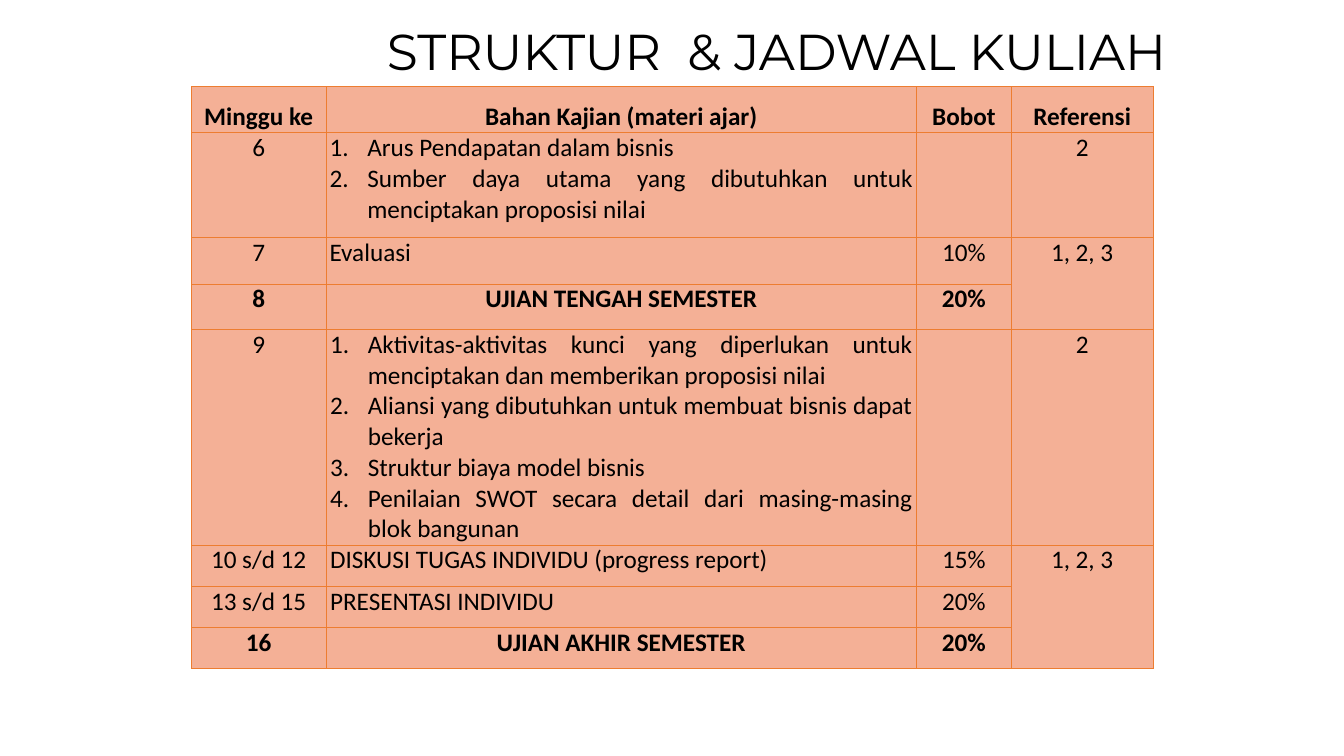
from dataclasses import dataclass

from lxml.etree import SubElement
from pptx import Presentation
from pptx.dml.color import RGBColor
from pptx.enum.text import MSO_ANCHOR as Anchor, PP_ALIGN as Align
from pptx.oxml import parse_xml
from pptx.oxml.ns import nsdecls, qn
from pptx.slide import Slide
from pptx.table import Table, _Cell as Cell
from pptx.text.text import _Paragraph as Paragraph
from pptx.util import Pt


@dataclass(frozen=True)
class Theme:
    ink: str = "000000"
    cell_fill: str = "F4B096"
    border: str = "ED7D31"
    border_width: float = 0.5
    title_font: str = "Montserrat"
    title_size: float = 36
    body_font: str = "Calibri"
    body_size: float = 18


@dataclass(frozen=True)
class Week:
    label: str
    topics: tuple[str, ...]
    weight: str
    references: str
    height: float
    align: Align = Align.LEFT
    bold: bool = False
    numbered: bool = False
    header: bool = False
    inset: float = 2.6


THEME = Theme()
COLUMN_WIDTHS = (96, 422, 67.5, 101.5)
TOPIC_COLUMN, REFERENCE_COLUMN = 1, 3
NUMBER_INDENT = 27
REFERENCE_SPANS = ((2, 3), (5, 7))

SCHEDULE = (
    Week("Minggu ke", ("Bahan Kajian (materi ajar)",), "Bobot", "Referensi", 33,
         Align.CENTER, bold=True, header=True),
    Week("6", ("Arus Pendapatan dalam bisnis",
               "Sumber daya utama yang dibutuhkan untuk menciptakan proposisi nilai"),
         "", "2", 74.5, Align.JUSTIFY, numbered=True),
    Week("7", ("Evaluasi",), "10%", "1, 2, 3", 33.5),
    Week("8", ("UJIAN TENGAH SEMESTER",), "20%", "", 32.5,
         Align.CENTER, bold=True, inset=3),
    Week("9", ("Aktivitas-aktivitas kunci yang diperlukan untuk menciptakan dan "
               "memberikan proposisi nilai",
               "Aliansi yang dibutuhkan untuk membuat bisnis dapat bekerja",
               "Struktur biaya model bisnis",
               "Penilaian SWOT secara detail dari masing-masing blok bangunan"),
         "", "2", 154, Align.JUSTIFY, numbered=True, inset=3),
    Week("10 s/d 12", ("DISKUSI TUGAS INDIVIDU (progress report)",), "15%", "1, 2, 3",
         29.5, Align.JUSTIFY, inset=3),
    Week("13 s/d 15", ("PRESENTASI INDIVIDU",), "20%", "", 29.5, inset=3),
    Week("16", ("UJIAN AKHIR SEMESTER",), "20%", "", 29.5,
         Align.CENTER, bold=True, inset=3),
)


def apply_format(target: object, values: dict[str, object]) -> None:
    for name, value in values.items():
        setattr(target, name, value)


def write(paragraph: Paragraph, wording: str, face: str, size: float,
          bold: bool = False) -> None:
    run = paragraph.add_run()
    run.text = wording
    apply_format(run.font, {"name": face, "size": Pt(size), "bold": bold})
    run.font.color.rgb = RGBColor.from_string(THEME.ink)


def number(paragraph: Paragraph) -> None:
    """Give the paragraph an automatic 1., 2., 3. with a hanging indent."""
    properties = paragraph._p.get_or_add_pPr()
    properties.set("marL", str(Pt(NUMBER_INDENT)))
    properties.set("indent", str(-Pt(NUMBER_INDENT)))
    SubElement(properties, qn("a:buFont"), typeface="+mj-lt")
    SubElement(properties, qn("a:buAutoNum"), type="arabicPeriod")


def paint(cell: Cell) -> None:
    """Fill the cell and rule its four sides."""
    cell.fill.solid()
    cell.fill.fore_color.rgb = RGBColor.from_string(THEME.cell_fill)
    properties = cell._tc.get_or_add_tcPr()
    for position, side in enumerate("LRTB"):
        properties.insert(position, parse_xml(
            f'<a:ln{side} {nsdecls("a")} w="{Pt(THEME.border_width)}"><a:solidFill>'
            f'<a:srgbClr val="{THEME.border}"/></a:solidFill></a:ln{side}>'))


def fill_week(table: Table, row: int, week: Week) -> None:
    table.rows[row].height = Pt(week.height)
    columns = ((week.label,), week.topics, (week.weight,), (week.references,))
    for column, entries in enumerate(columns):
        cell = table.cell(row, column)
        apply_format(cell, {
            "margin_left": Pt(week.inset), "margin_right": Pt(week.inset),
            "margin_top": Pt(0), "margin_bottom": Pt(0),
            "vertical_anchor": Anchor.MIDDLE if week.header else Anchor.TOP})
        paint(cell)
        is_topic = column == TOPIC_COLUMN
        for index, entry in enumerate(entries):
            if not entry:
                continue
            frame = cell.text_frame
            paragraph = frame.add_paragraph() if index else frame.paragraphs[0]
            apply_format(paragraph, {
                "alignment": week.align if is_topic else Align.CENTER,
                "line_spacing": 1.5 if week.header else 1.0})
            if is_topic and week.numbered:
                number(paragraph)
            write(paragraph, entry, THEME.body_font, THEME.body_size, week.bold)


def add_schedule(slide: Slide) -> None:
    table = slide.shapes.add_table(
        len(SCHEDULE), len(COLUMN_WIDTHS), Pt(136.8), Pt(61.8),
        Pt(sum(COLUMN_WIDTHS)), Pt(sum(week.height for week in SCHEDULE))).table
    apply_format(table, {"first_row": False, "horz_banding": False})
    for column, width in zip(table.columns, COLUMN_WIDTHS):
        column.width = Pt(width)
    for row, week in enumerate(SCHEDULE):
        fill_week(table, row, week)
    for first, last in REFERENCE_SPANS:
        table.cell(first, REFERENCE_COLUMN).merge(table.cell(last, REFERENCE_COLUMN))


def add_title(slide: Slide) -> None:
    frame = slide.shapes.add_textbox(Pt(120), Pt(0), Pt(720), Pt(50.4)).text_frame
    apply_format(frame, {"word_wrap": True, "vertical_anchor": Anchor.TOP})
    title = frame.paragraphs[0]
    apply_format(title, {"alignment": Align.RIGHT, "line_spacing": 1.25})
    write(title, "STRUKTUR  & JADWAL KULIAH", THEME.title_font, THEME.title_size)


def main() -> None:
    deck = Presentation()
    apply_format(deck, {"slide_width": Pt(960), "slide_height": Pt(540)})
    slide = deck.slides.add_slide(deck.slide_layouts[6])
    add_schedule(slide)
    add_title(slide)
    deck.save("out.pptx")


if __name__ == "__main__":
    main()
